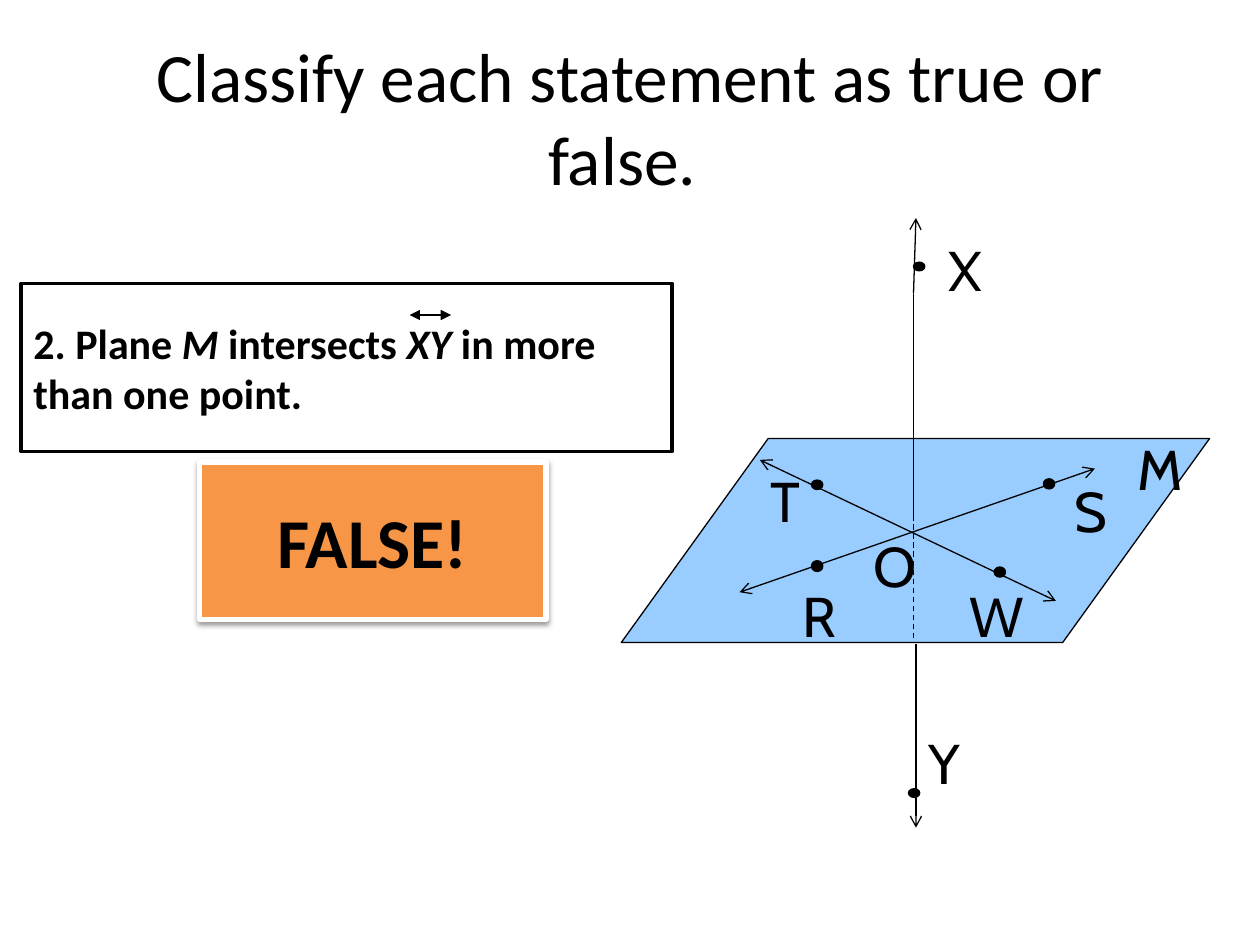
from typing import NamedTuple, Optional

from lxml import etree
from pptx import Presentation
from pptx.dml.color import RGBColor
from pptx.enum.dml import MSO_LINE
from pptx.enum.shapes import MSO_CONNECTOR, MSO_SHAPE
from pptx.enum.text import MSO_ANCHOR, PP_ALIGN
from pptx.oxml.ns import qn
from pptx.util import Pt

BLACK = RGBColor(0x00, 0x00, 0x00)
WHITE = RGBColor(0xFF, 0xFF, 0xFF)
PLANE_BLUE = RGBColor(0x99, 0xCC, 0xFF)
ANSWER_ORANGE = RGBColor(0xF7, 0x96, 0x46)

RECTANGLE = MSO_SHAPE.RECTANGLE
PARALLELOGRAM = MSO_SHAPE.PARALLELOGRAM
OVAL = MSO_SHAPE.OVAL
STRAIGHT = MSO_CONNECTOR.STRAIGHT
DASH = MSO_LINE.DASH
MIDDLE = MSO_ANCHOR.MIDDLE
LEFT, CENTER = PP_ALIGN.LEFT, PP_ALIGN.CENTER

TITLE_ONLY = 5
HAIRLINE = 0.75
DOT_WIDTH = 6.5
LABEL_HEIGHT = 46


class Line(NamedTuple):
    x1: float
    y1: float
    x2: float
    y2: float
    head: Optional[str] = None
    tail: Optional[str] = None
    dashed: bool = False


class Dot(NamedTuple):
    left: float
    top: float
    height: float


class Label(NamedTuple):
    text: str
    left: float
    top: float
    width: float


LINES = [
    Line(522, 296.6, 522, 167.8),
    Line(522, 294.5, 522, 367.2, dashed=True),
    Line(422.6, 338.4, 625.7, 267.8, "arrow", "arrow"),
    Line(434.2, 262.8, 603.4, 343.4, "arrow", "arrow"),
    Line(522, 167.8, 523.4, 124.6, tail="arrow"),
    Line(523.4, 367.9, 523.4, 473, tail="arrow"),
]
XY_MARK = Line(234, 180, 257.8, 180, "triangle", "triangle")

DOTS = [
    Dot(522, 149.8, 5),
    Dot(519.1, 450.7, 5),
    Dot(463.7, 320.4, 6.2),
    Dot(463.7, 274.3, 5.4),
    Dot(568.1, 324, 5.8),
    Dot(596.2, 273.6, 5.8),
]

LABELS = [
    Label("T", 433.4, 262.8, 33),
    Label("O", 491.8, 300.2, 37.4),
    Label("X", 535, 131, 32.4),
    Label("R", 451.4, 329, 36),
    Label("W", 547.2, 329, 44),
    Label("S", 607, 268.6, 32.4),
    Label("Y", 523.4, 412.6, 31),
    Label("M", 643, 244.8, 32.4),
]

STATEMENT = [
    ("2. Plane ", False),
    ("M", True),
    (" intersects ", False),
    ("XY", True),
    (" in more than one point.", False),
]


def add_span(para, text: str, *, size: float, font: str = "Calibri",
             bold: bool = False, italic: bool = False) -> None:
    span = para.add_run()
    span.text = text
    span.font.name = font
    span.font.size = Pt(size)
    span.font.bold = bold
    span.font.italic = italic
    span.font.color.rgb = BLACK


def add_box(page, kind, left: float, top: float, width: float, height: float, *,
            fill: RGBColor, line: RGBColor = BLACK, weight: float = HAIRLINE):
    box = page.shapes.add_shape(kind, Pt(left), Pt(top), Pt(width), Pt(height))
    box.shadow.inherit = False
    box.fill.solid()
    box.fill.fore_color.rgb = fill
    box.line.color.rgb = line
    box.line.width = Pt(weight)
    return box


def start_text(box, align):
    """Centre the text vertically and return its aligned first paragraph."""
    box.text_frame.word_wrap = True
    box.text_frame.vertical_anchor = MIDDLE
    para = box.text_frame.paragraphs[0]
    para.alignment = align
    return para


def add_line(page, line: Line) -> None:
    connector = page.shapes.add_connector(
        STRAIGHT, Pt(line.x1), Pt(line.y1), Pt(line.x2), Pt(line.y2))
    connector.line.color.rgb = BLACK
    connector.line.width = Pt(HAIRLINE)
    if line.dashed:
        connector.line.dash_style = DASH
    outline = connector.line._get_or_add_ln()
    for tag, arrow in (("a:headEnd", line.head), ("a:tailEnd", line.tail)):
        if arrow:
            etree.SubElement(outline, qn(tag), type=arrow)
    etree.SubElement(connector._element.spPr, qn("a:effectLst"))


def add_label(page, label: Label) -> None:
    box = page.shapes.add_textbox(
        Pt(label.left), Pt(label.top), Pt(label.width), Pt(LABEL_HEIGHT))
    box.text_frame.word_wrap = True
    add_span(box.text_frame.paragraphs[0], label.text, size=32, font="Cabin")


def add_drop_shadow(box, blur: float, distance: float, opacity: int) -> None:
    effects = box._element.spPr.find(qn("a:effectLst"))
    shadow = etree.SubElement(
        effects, qn("a:outerShdw"), blurRad=str(Pt(blur)),
        dist=str(Pt(distance)), dir=str(90 * 60000), rotWithShape="0")
    color = etree.SubElement(shadow, qn("a:srgbClr"), val=str(BLACK))
    etree.SubElement(color, qn("a:alpha"), val=str(opacity * 1000))


def add_title(page) -> None:
    title = page.shapes.title
    title.left, title.top, title.width, title.height = (
        Pt(36), Pt(21.6), Pt(648), Pt(90))
    add_span(start_text(title, CENTER),
             "Classify each statement as true or false. ", size=39.6)


def add_diagram(page) -> None:
    plane = add_box(page, PARALLELOGRAM, 355, 250.6, 336.2, 116.6, fill=PLANE_BLUE)
    plane.adjustments[0] = 0.72
    for line in LINES:
        add_line(page, line)
    for dot in DOTS:
        add_box(page, OVAL, dot.left, dot.top, DOT_WIDTH, dot.height, fill=BLACK)
    for label in LABELS:
        add_label(page, label)


def add_statement(page) -> None:
    box = add_box(page, RECTANGLE, 12, 162, 372, 96, fill=WHITE, weight=2)
    para = start_text(box, LEFT)
    for text, italic in STATEMENT:
        add_span(para, text, size=24, bold=True, italic=italic)
    add_line(page, XY_MARK)


def add_answer(page) -> None:
    box = add_box(page, RECTANGLE, 114, 264, 198, 90,
                  fill=ANSWER_ORANGE, line=WHITE, weight=3)
    add_drop_shadow(box, blur=3.1, distance=1.6, opacity=38)
    add_span(start_text(box, CENTER), "FALSE!", size=40, bold=True)


def main() -> None:
    deck = Presentation()
    deck.slide_width, deck.slide_height = Pt(720), Pt(540)
    page = deck.slides.add_slide(deck.slide_layouts[TITLE_ONLY])
    add_title(page)
    add_diagram(page)
    add_statement(page)
    add_answer(page)
    deck.save("out.pptx")


if __name__ == "__main__":
    main()
